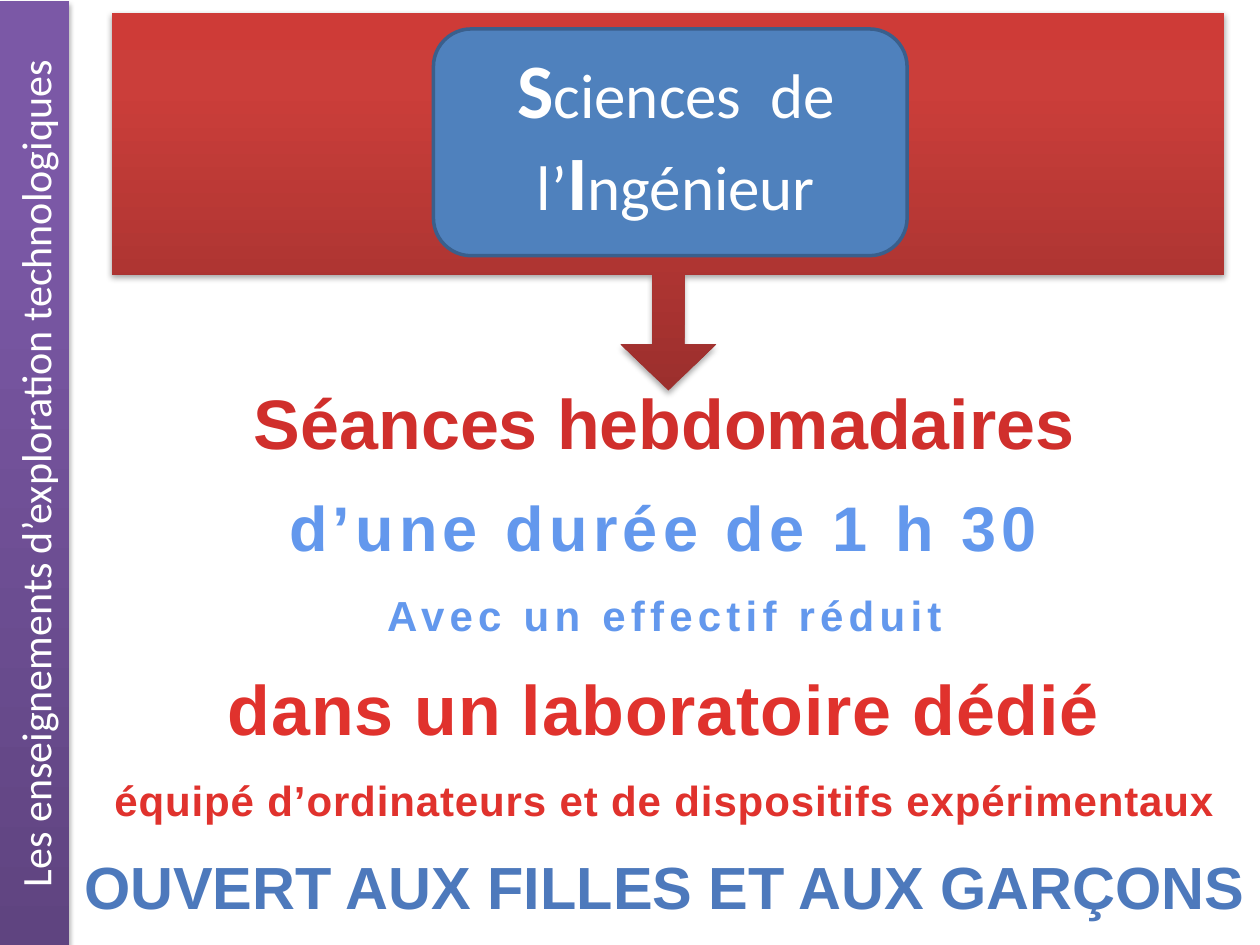
"""Builds the engineering sciences slide."""
from dataclasses import dataclass

from lxml.etree import SubElement as Sub
from pptx import Presentation
from pptx.dml.color import RGBColor as Rgb
from pptx.enum.shapes import MSO_SHAPE as Kind
from pptx.enum.text import MSO_ANCHOR as Anchor, PP_ALIGN as Align
from pptx.oxml.ns import qn
from pptx.util import Inches, Pt


@dataclass(frozen=True)
class Theme:
    head: str = "Calibri"
    body: str = "Arial"
    white: str = "FFFFFF"
    blue: str = "4F81BD"
    edge: str = "3A5F8C"
    rose: str = "D02F2C"
    red: str = "E0322D"
    sky: str = "6398ED"
    navy: str = "4D79BC"
    reds: tuple = ((0, "9C2F2D"), (80, "CB3E3A"), (100, "CE3B37"))
    plums: tuple = ((0, "5F4480"), (80, "7B58A6"), (100, "7C57A8"))
    small: int = 24
    wide: int = 34
    mid: int = 36
    big: int = 40
    cap: int = 44


THEME = Theme()


def style(font, name, size, color, bold=False):
    font.name, font.size, font.bold = name, Pt(size), bold
    font.color.rgb = Rgb.from_string(color)


def add_form(slide, kind, box):
    form = slide.shapes.add_shape(kind, *map(Inches, box))
    form.shadow.inherit = False
    return form


def add_band(slide, kind, box, stops):
    band = add_form(slide, kind, box)
    band.line.fill.background()
    band.fill.gradient()
    band.fill.gradient_angle = 90
    props = band.element.spPr
    grad = props.find(qn("a:gradFill"))
    grad.find(qn("a:lin")).set("ang", str(270 * 60000))
    items = grad.find(qn("a:gsLst"))
    for old in list(items):
        items.remove(old)
    for pos, color in stops:
        stop = Sub(items, qn("a:gs"), pos=str(pos * 1000))
        Sub(stop, qn("a:srgbClr"), val=color)
    shade = Sub(props.find(qn("a:effectLst")), qn("a:outerShdw"),
                blurRad=str(Pt(3.1)), dist=str(Pt(1.8)),
                dir=str(90 * 60000), rotWithShape="0")
    black = Sub(shade, qn("a:srgbClr"), val="000000")
    Sub(black, qn("a:alpha"), val="35000")
    return band


def add_side(slide):
    side = add_band(slide, Kind.RECTANGLE, (0, 0.01, 0.55, 7.5), THEME.plums)
    frame = side.text_frame
    frame.vertical_anchor = Anchor.MIDDLE
    frame._txBody.bodyPr.set("vert", "vert270")
    para = frame.paragraphs[0]
    para.text = "Les enseignements d’exploration technologiques"
    para.alignment = Align.CENTER
    style(para.font, THEME.head, THEME.small, THEME.white)


def add_title(slide):
    card = add_form(slide, Kind.ROUNDED_RECTANGLE, (3.44, 0.23, 3.76, 1.8))
    card.fill.solid()
    card.fill.fore_color.rgb = Rgb.from_string(THEME.blue)
    card.line.color.rgb = Rgb.from_string(THEME.edge)
    card.line.width = Pt(2)
    box = slide.shapes.add_textbox(*map(Inches, (3.63, 0.28, 3.47, 1.58)))
    box.text_frame.word_wrap = True
    para = box.text_frame.paragraphs[0]
    para.alignment = Align.CENTER
    parts = ("S", True), ("ciences  de l’", False), ("I", True), ("ngénieur", False)
    for text, bold in parts:
        run = para.add_run()
        run.text = text
        size = THEME.cap if bold else THEME.mid
        style(run.font, THEME.head, size, THEME.white, bold)


def add_line(slide, text, box, size, color, gap=0):
    area = slide.shapes.add_textbox(*map(Inches, box))
    area.text_frame.word_wrap = False
    para = area.text_frame.paragraphs[0]
    para.text = text
    para.alignment = Align.CENTER
    style(para.font, THEME.body, size, color, True)
    if gap:
        para.runs[0]._r.get_or_add_rPr().set("spc", str(int(gap * 100)))


def main():
    deck = Presentation()
    deck.slide_width, deck.slide_height = Inches(10), Inches(7.5)
    slide = deck.slides.add_slide(deck.slide_layouts[6])
    call = add_band(slide, Kind.DOWN_ARROW_CALLOUT, (0.89, 0.1, 8.83, 3), THEME.reds)
    for num, value in enumerate((0.085, 0.126, 0.122, 0.693)):
        call.adjustments[num] = value
    add_side(slide)
    add_title(slide)
    lines = (
        ("Séances hebdomadaires", (1.88, 2.96, 6.78, 0.77), THEME.big, THEME.rose),
        ("d’une durée de 1 h 30", (1.64, 3.83, 7.26, 0.71), THEME.mid, THEME.sky, 3),
        ("Avec un effectif réduit", (2.93, 4.63, 4.69, 0.5), THEME.small, THEME.sky, 3),
        ("dans un laboratoire dédié", (1.64, 5.23, 7.26, 0.77), THEME.big, THEME.red, 0.5),
        ("équipé d’ordinateurs et de dispositifs expérimentaux",
         (0.75, 6.1, 9.05, 0.5), THEME.small, THEME.red, 0.5),
        ("OUVERT AUX FILLES ET AUX GARÇONS", (0.52, 6.7, 9.51, 0.67), THEME.wide, THEME.navy),
    )
    for line in lines:
        add_line(slide, *line)
    deck.save("out.pptx")


if __name__ == "__main__":
    main()
